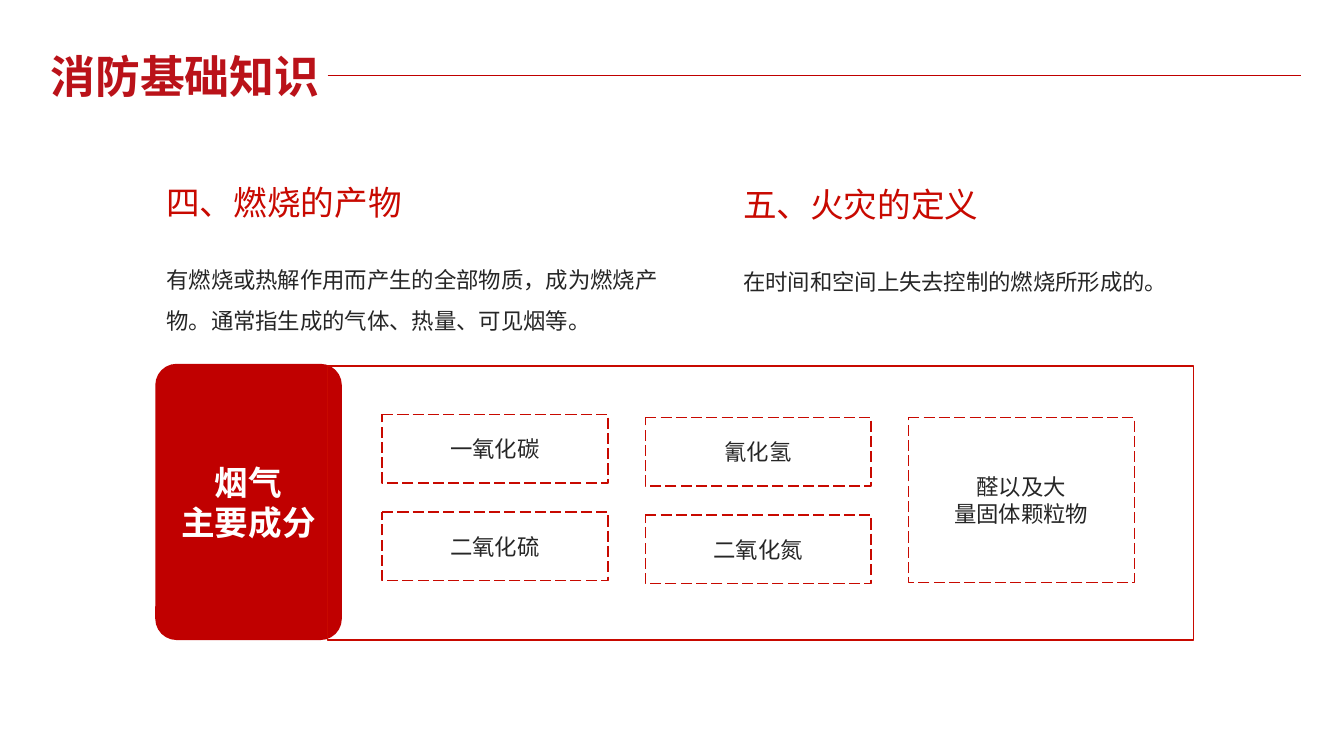
from pptx import Presentation
from pptx import util as u
from pptx.dml.color import RGBColor
from pptx.enum import dml, shapes, text
from pptx.oxml.ns import qn
from lxml import etree

HUES = {"title": "BA1219", "red": "C80900", "deep": "C00000",
        "ink": "262626", "white": "FFFFFF"}
FONT = "Noto Sans CJK SC"


class Deck:
    def __init__(self):
        self.prs = Presentation()
        self.prs.slide_width = u.Inches(13.33)
        self.prs.slide_height = u.Inches(7.5)
        # Comparison layout: a title, then two pairs of heading and body
        self.slide = self.prs.slides.add_slide(self.prs.slide_layouts[4])
        self.holders = iter(list(self.slide.placeholders))

    def hue(self, name):
        return RGBColor.from_string(HUES[name])

    def label(self, shape, words, size, hue, bold=False, align="LEFT",
              anchor="TOP", wrap=True, space=1):
        frame = shape.text_frame
        frame.text = words
        frame.word_wrap = wrap
        frame.auto_size = text.MSO_AUTO_SIZE.NONE
        frame.vertical_anchor = text.MSO_ANCHOR[anchor]
        for para in frame.paragraphs:
            para.alignment = text.PP_ALIGN[align]
            para.line_spacing = space
            para.space_before = u.Pt(0)
            for run in para.runs:
                font = run.font
                font.name, font.size, font.bold = FONT, u.Pt(size), bold
                font.color.rgb = self.hue(hue)
                ea = etree.SubElement(run._r.get_or_add_rPr(), qn("a:ea"))
                ea.set("typeface", FONT)

    def holder(self, words, box, size, hue, **style):
        """Move the next placeholder into box and fill it, without bullets."""
        shape = next(self.holders)
        shape.left, shape.top, shape.width, shape.height = map(u.Inches, box)
        self.label(shape, words, size, hue, **style)
        for para in shape.text_frame.paragraphs:
            props = para._p.get_or_add_pPr()
            props.set("marL", "0")
            props.set("indent", "0")
            etree.SubElement(props, qn("a:buNone"))

    def panel(self, box, fill=None, line=None, dash=False, round=0):
        kind = shapes.MSO_SHAPE.ROUNDED_RECTANGLE
        shape = self.slide.shapes.add_shape(kind, *map(u.Inches, box))
        shape.adjustments[0] = round
        shape.shadow.inherit = False
        if fill:
            shape.fill.solid()
            shape.fill.fore_color.rgb = self.hue(fill)
        else:
            shape.fill.background()
        if line:
            shape.line.color.rgb = self.hue(line)
            shape.line.width = u.Pt(1)
            if dash:
                shape.line.dash_style = dml.MSO_LINE.LONG_DASH
        else:
            shape.line.fill.background()
        return shape

    def rule(self, left, right, top, hue):
        line = self.slide.shapes.add_connector(
            shapes.MSO_CONNECTOR.STRAIGHT,
            *map(u.Inches, (left, top, right, top)))
        line.line.color.rgb = self.hue(hue)
        line.line.width = u.Pt(0.5)
        etree.SubElement(line._element.spPr, qn("a:effectLst"))


def main():
    deck = Deck()
    deck.holder("消防基础知识", (0.4, 0.43, 3.51, 0.64), 32, "title", bold=True)
    deck.rule(3.25, 12.9, 0.75, "deep")

    topics = [
        (1.55, 1.75, 5.17, 0.87, "四、燃烧的产物",
         "有燃烧或热解作用而产生的全部物质，成为燃烧产物。通常指生成的气体、热量、可见烟等。"),
        (7.27, 1.77, 6, 0.46, "五、火灾的定义",
         "在时间和空间上失去控制的燃烧所形成的。"),
    ]
    for left, top, wide, high, head, body in topics:
        deck.holder(head, (left, top, 2.56, 0.5), 24, "red", wrap=False)
        deck.holder(body, (left, top + 0.71, wide, high), 16, "ink", space=1.5)

    smoke = deck.panel((1.54, 3.61, 1.85, 2.74), fill="deep", round=0.114)
    deck.label(smoke, "烟气\n主要成分", 24, "white", bold=True,
               align="CENTER", anchor="MIDDLE")

    gases = [(4.11, 0.68, ["一氧化碳", "二氧化硫"]),
             (4.14, 0.68, ["氰化氢", "二氧化氮"]),
             (4.14, 1.64, ["醛以及大\n量固体颗粒物"])]
    for col, (top, high, names) in enumerate(gases):
        for row, name in enumerate(names):
            box = (3.79 + 2.61 * col, top + 0.97 * row, 2.24, high)
            cell = deck.panel(box, line="red", dash=True)
            deck.label(cell, name, 16, "ink", align="CENTER", anchor="MIDDLE")

    deck.panel((3.25, 3.63, 8.59, 2.72), line="red")
    deck.prs.save("out.pptx")


if __name__ == "__main__":
    main()
